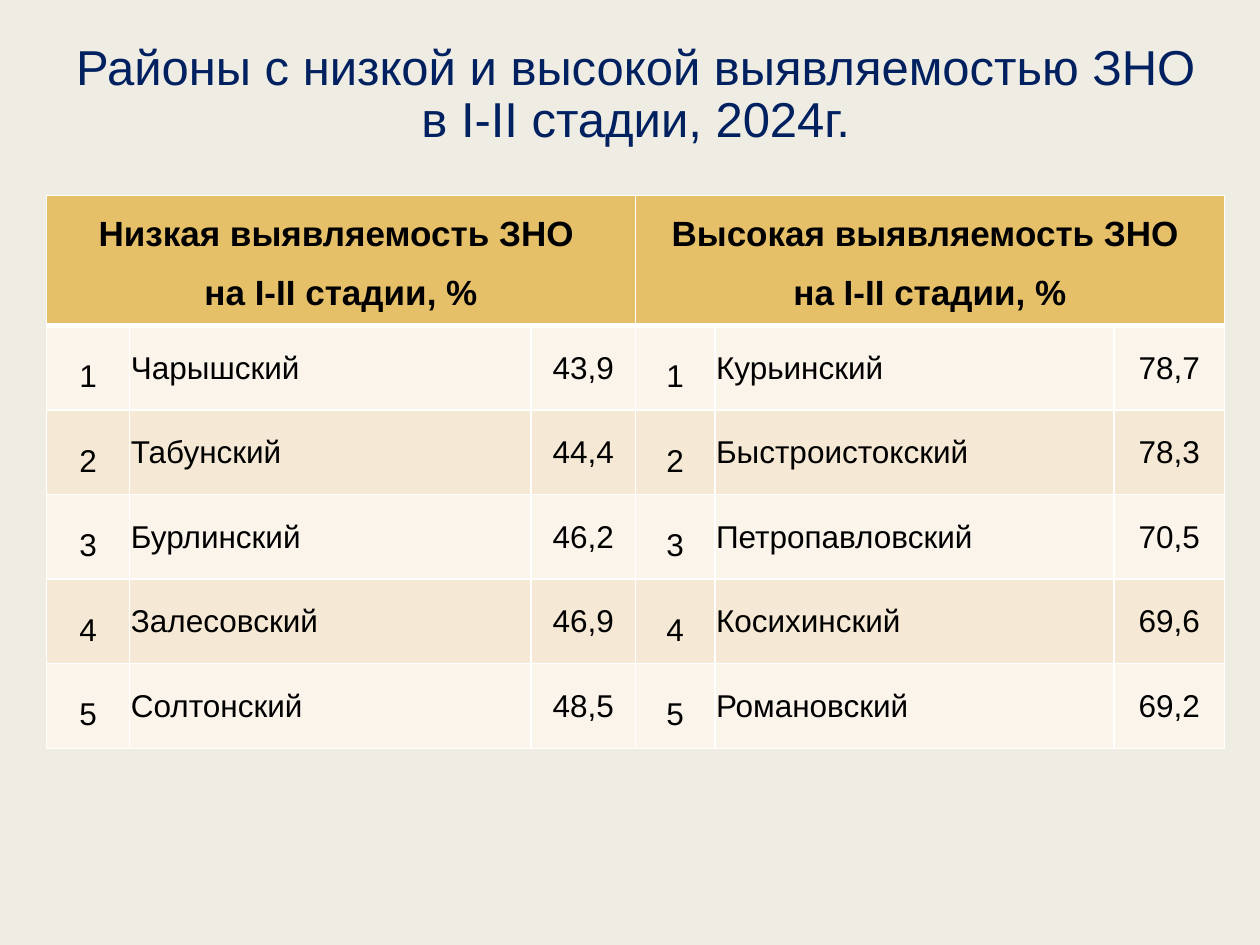
from lxml.etree import SubElement
from pptx import Presentation
from pptx.dml.color import RGBColor as Rgb
from pptx.enum.text import MSO_ANCHOR as Anchor, PP_ALIGN as Align
from pptx.oxml.ns import qn
from pptx.util import Inches, Pt

COLORS = {
    "page": "EFEDE3", "title": "002060", "text": "000000", "border": "FFFFFF",
    "header": "E6C069", "odd": "FAF4EB", "even": "F5E8D4",
}
FONT = "Arial"
WIDTH, HEIGHT = Inches(10), Inches(7.5)
LEFT, SPAN = 0.037, 0.935
TITLE = "Районы с низкой и высокой выявляемостью ЗНО в I-II стадии, 2024г."
HEADERS = [
    ["Низкая выявляемость ЗНО ", "на I-II стадии, %"],
    ["Высокая выявляемость ЗНО ", "на I-II стадии, %"],
]
LOW = [("Чарышский", "43,9"), ("Табунский", "44,4"), ("Бурлинский", "46,2"),
       ("Залесовский", "46,9"), ("Солтонский", "48,5")]
HIGH = [("Курьинский", "78,7"), ("Быстроистокский", "78,3"), ("Петропавловский", "70,5"),
        ("Косихинский", "69,6"), ("Романовский", "69,2")]
COLUMN_WIDTHS = [0.66, 3.19, 0.83, 0.63, 3.17, 0.88]
ROW_HEIGHTS = [1.03] + [0.67] * len(LOW)


def color(name):
    return Rgb.from_string(COLORS[name])


def write(frame, lines, size, align=Align.CENTER, spacing=1.0, bold=False, ink="text"):
    for index, line in enumerate(lines):
        para = frame.add_paragraph() if index else frame.paragraphs[0]
        para.alignment = align
        para.line_spacing = spacing
        span = para.add_run()
        span.text = line
        span.font.name = FONT
        span.font.size = Pt(size)
        span.font.bold = bold
        span.font.color.rgb = color(ink)


def paint_cell(cell, fill, top=1, bottom=1):
    properties = cell._tc.get_or_add_tcPr()
    for side, width in zip("LRTB", (1, 1, top, bottom)):
        line = SubElement(properties, qn(f"a:ln{side}"), w=str(Pt(width)))
        solid = SubElement(line, qn("a:solidFill"))
        SubElement(solid, qn("a:srgbClr"), val=COLORS["border"])
    cell.fill.solid()
    cell.fill.fore_color.rgb = color(fill)


def set_margins(cell, side, top):
    cell.margin_left = cell.margin_right = Inches(side)
    cell.margin_top, cell.margin_bottom = Inches(top), 0


def add_title(page, left, top, width, height):
    box = page.shapes.add_textbox(left, top, width, height)
    frame = box.text_frame
    frame.word_wrap = True
    frame.vertical_anchor = Anchor.MIDDLE
    write(frame, [TITLE], 28, spacing=0.89, ink="title")


def fill_half(table, first, header, districts):
    for offset in range(3):
        paint_cell(table.cell(0, first + offset), "header", bottom=3)
    heading = table.cell(0, first)
    heading.merge(table.cell(0, first + 2))
    set_margins(heading, 0.04, 0)
    write(heading.text_frame, header, 20, spacing=1.5, bold=True)

    for row, (district, share) in enumerate(districts, 1):
        entries = [
            (str(row), Align.CENTER, 1.5, 0.04, 0),
            (district, Align.LEFT, 1.0, 0.01, 0.01),
            (share, Align.CENTER, 1.0, 0.01, 0.01),
        ]
        for offset, (text, align, spacing, side, top) in enumerate(entries):
            cell = table.cell(row, first + offset)
            paint_cell(cell, "odd" if row % 2 else "even", top=3 if row == 1 else 1)
            set_margins(cell, side, top)
            cell.vertical_anchor = Anchor.MIDDLE
            write(cell.text_frame, [text], 18, align, spacing)


def add_districts_table(page, left, top, width, height):
    table = page.shapes.add_table(
        len(ROW_HEIGHTS), len(COLUMN_WIDTHS), left, top, width, height).table
    for column, share in zip(table.columns, COLUMN_WIDTHS):
        column.width = int(width * share / sum(COLUMN_WIDTHS))
    for row, share in zip(table.rows, ROW_HEIGHTS):
        row.height = int(height * share / sum(ROW_HEIGHTS))
    for half, (header, districts) in enumerate(zip(HEADERS, (LOW, HIGH))):
        fill_half(table, half * 3, header, districts)


def main():
    deck = Presentation()
    deck.slide_width, deck.slide_height = WIDTH, HEIGHT
    page = deck.slides.add_slide(deck.slide_layouts[6])
    page.background.fill.solid()
    page.background.fill.fore_color.rgb = color("page")
    left, width = int(WIDTH * LEFT), int(WIDTH * SPAN)
    add_title(page, left, Inches(0.29), width, Inches(0.94))
    add_districts_table(page, left, Inches(1.55), width, Inches(4.39))
    deck.save("out.pptx")


if __name__ == "__main__":
    main()
